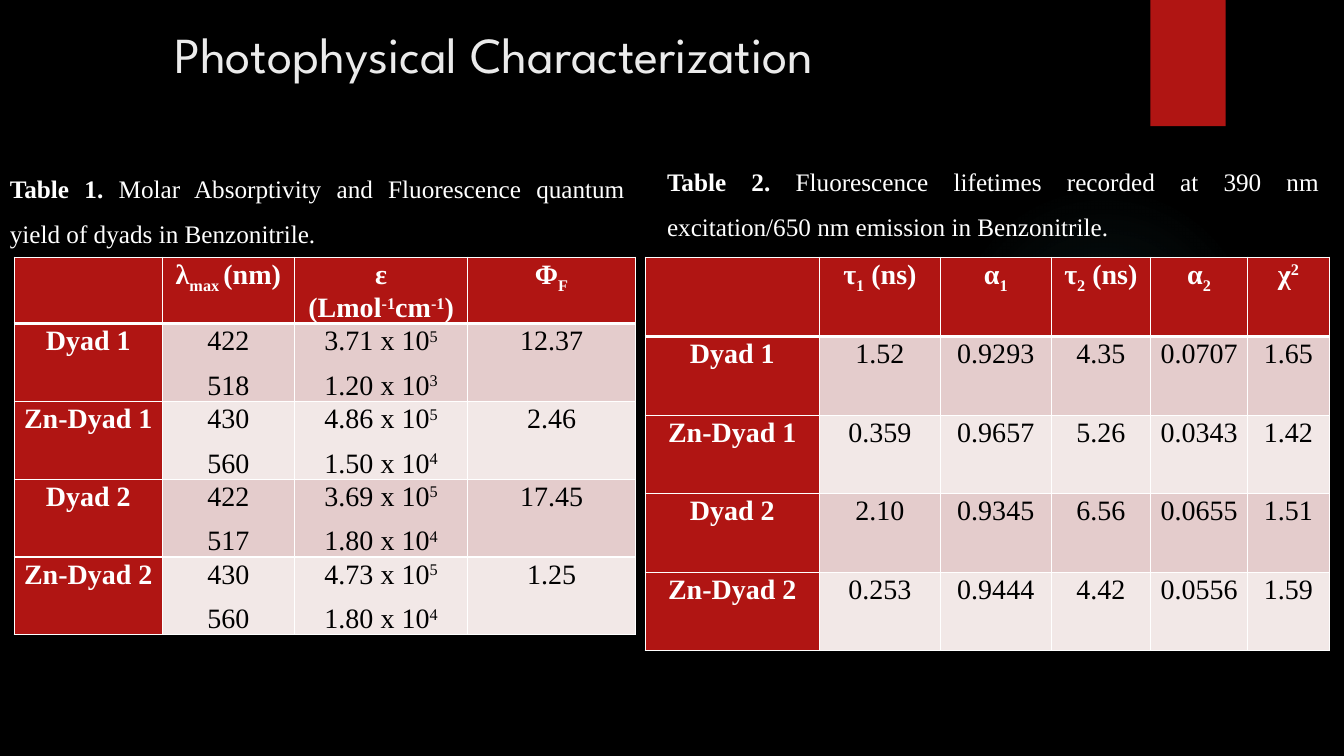
from lxml import etree
from pptx import Presentation
from pptx.dml.color import RGBColor
from pptx.enum.shapes import MSO_SHAPE
from pptx.enum.text import MSO_ANCHOR, PP_ALIGN
from pptx.oxml import parse_xml
from pptx.oxml.ns import qn
from pptx.util import Cm, Pt

CENTER, JUSTIFY, MIDDLE = PP_ALIGN.CENTER, PP_ALIGN.JUSTIFY, MSO_ANCHOR.MIDDLE
RECT, OVAL = MSO_SHAPE.RECTANGLE, MSO_SHAPE.OVAL

RED, WHITE, BLACK = "B01513", "FFFFFF", "000000"
BANDS = "E4CCCC", "F2E8E7"
SERIF = "Times New Roman"
TITLE = "Photophysical Characterization"

# ~ toggles subscript, ^ toggles superscript, a line break starts a paragraph
YIELDS = [
    ("", "λ~max ~(nm)", "ε (Lmol^-1^cm^-1^)", "Φ~F~"),
    ("Dyad 1", "422\n518", "3.71 x 10^5^\n1.20 x 10^3^", "12.37"),
    ("Zn-Dyad 1", "430\n560", "4.86 x 10^5^\n1.50 x 10^4^", "2.46"),
    ("Dyad 2", "422\n517", "3.69 x 10^5^\n1.80 x 10^4^", "17.45"),
    ("Zn-Dyad 2", "430\n560", "4.73 x 10^5^\n1.80 x 10^4^", "1.25"),
]
LIVES = [
    ("", "τ~1~ (ns)", "α~1~", "τ~2~ (ns)", "α~2~", "χ^2^"),
    ("Dyad 1", "1.52", "0.9293", "4.35", "0.0707", "1.65"),
    ("Zn-Dyad 1", "0.359", "0.9657", "5.26", "0.0343", "1.42"),
    ("Dyad 2", "2.10", "0.9345", "6.56", "0.0655", "1.51"),
    ("Zn-Dyad 2", "0.253", "0.9444", "4.42", "0.0556", "1.59"),
]
# rows, left, column widths, header height, row height
TABLES = [
    (YIELDS, 0.36, (3.73, 3.33, 4.37, 4.22), 1.66, 1.96),
    (LIVES, 16.26, (4.39, 3.05, 2.79, 2.51, 2.44, 2.06), 2, 1.98),
]
TABLE_TOP = 6.48
# left, top, width, label, text
CAPTIONS = [
    (16.56, 3.68, 16.94, "Table 2.", " Fluorescence lifetimes recorded at 390 nm "
     "excitation/650 nm emission in Benzonitrile."),
    (0, 3.86, 16, "Table 1.", " Molar Absorptivity and Fluorescence quantum "
     "yield of dyads in Benzonitrile."),
]
GLOW = [(0, 7), (36, 6), (69, 0)]  # stop and opacity, in percent
SHIFT = {"~": "-25000", "^": "30000"}


def paint(item, color):
    item.fill.solid()
    item.fill.fore_color.rgb = RGBColor.from_string(color)


def style(para, size, color, face=SERIF, align=None, lines=None, after=None):
    font = para.font
    font.size, font.name = Pt(size), face
    font.color.rgb = RGBColor.from_string(color)
    para.alignment, para.line_spacing = align, lines
    if after is not None:
        para.space_after = Pt(after)


def write(para, text, bold):
    """Add runs, raised or lowered where the text is marked."""
    for mark in SHIFT:
        text = text.replace(mark, f"|{mark}|")
    base = None
    for part in filter(None, text.split("|")):
        if part in SHIFT:
            base = None if base else SHIFT[part]
            continue
        run = para.add_run()
        run.text, run.font.bold = part, bold
        if base:
            run._r.get_or_add_rPr().set("baseline", base)


def edge(cell, row):
    """Draw white cell borders, heavy between header and body."""
    props = cell._tc.get_or_add_tcPr()
    for side in "LRTB":
        heavy = (row, side) in ((0, "B"), (1, "T"))
        line = etree.SubElement(props, qn(f"a:ln{side}"), w=str(Pt(3 if heavy else 1)))
        fill = etree.SubElement(line, qn("a:solidFill"))
        etree.SubElement(fill, qn("a:srgbClr"), val=WHITE)


def add_grid(slide, rows, left, widths, head, high):
    body = len(rows) - 1
    table = slide.shapes.add_table(
        len(rows), len(widths), Cm(left), Cm(TABLE_TOP),
        Cm(sum(widths)), Cm(head + body * high)).table
    for col, width in zip(table.columns, widths):
        col.width = Cm(width)
    for r, row in enumerate(rows):
        table.rows[r].height = Cm(high if r else head)
        for c, text in enumerate(row):
            cell = table.cell(r, c)
            label = r == 0 or c == 0
            edge(cell, r)
            paint(cell, RED if label else BANDS[(r - 1) % 2])
            cell.margin_left = cell.margin_right = Cm(0.18)
            cell.margin_top = cell.margin_bottom = 0
            frame = cell.text_frame
            for n, line in enumerate(text.split("\n")):
                para = frame.add_paragraph() if n else frame.paragraphs[0]
                write(para, line, label)
                style(para, 20, WHITE if label else BLACK,
                      align=CENTER, lines=1.07, after=8)


def add_plain(slide, kind, *box):
    shape = slide.shapes.add_shape(kind, *map(Cm, box))
    shape.shadow.inherit = False
    shape.line.fill.background()
    return shape


def add_box(slide, *box):
    frame = slide.shapes.add_textbox(*map(Cm, box)).text_frame
    frame.word_wrap = True
    return frame


def add_glow(slide):
    oval = add_plain(slide, OVAL, 23.9, 4.65, 7.82, 7.82)
    stops = "".join(
        f'<a:gs pos="{pos}000"><a:srgbClr val="50B9C1">'
        f'<a:alpha val="{alpha}000"/></a:srgbClr></a:gs>' for pos, alpha in GLOW)
    grad = parse_xml(
        '<a:gradFill xmlns:a="http://schemas.openxmlformats.org/drawingml/2006/main">'
        f'<a:gsLst>{stops}</a:gsLst><a:path path="circle">'
        '<a:fillToRect l="50000" t="50000" r="50000" b="50000"/></a:path></a:gradFill>')
    oval._element.spPr.find(qn("a:prstGeom")).addnext(grad)


def main():
    deck = Presentation()
    deck.slide_width, deck.slide_height = Cm(33.87), Cm(19.05)
    slide = deck.slides.add_slide(deck.slide_layouts[6])
    paint(slide.background, BLACK)
    add_glow(slide)
    paint(add_plain(slide, RECT, 28.99, 0, 1.9, 3.18), RED)

    for grid in TABLES:
        add_grid(slide, *grid)

    frame = add_box(slide, 4.14, 0.13, 21.23, 2.44)
    frame.vertical_anchor = MIDDLE
    para = frame.paragraphs[0]
    para.text = TITLE
    style(para, 36, "EBEBEB", "League Spartan")

    for left, top, width, label, text in CAPTIONS:
        para = add_box(slide, left, top, width, 2.44).paragraphs[0]
        write(para, label, True)
        write(para, text, False)
        style(para, 18, WHITE, align=JUSTIFY, lines=1.5, after=8)

    deck.save("out.pptx")


if __name__ == "__main__":
    main()
